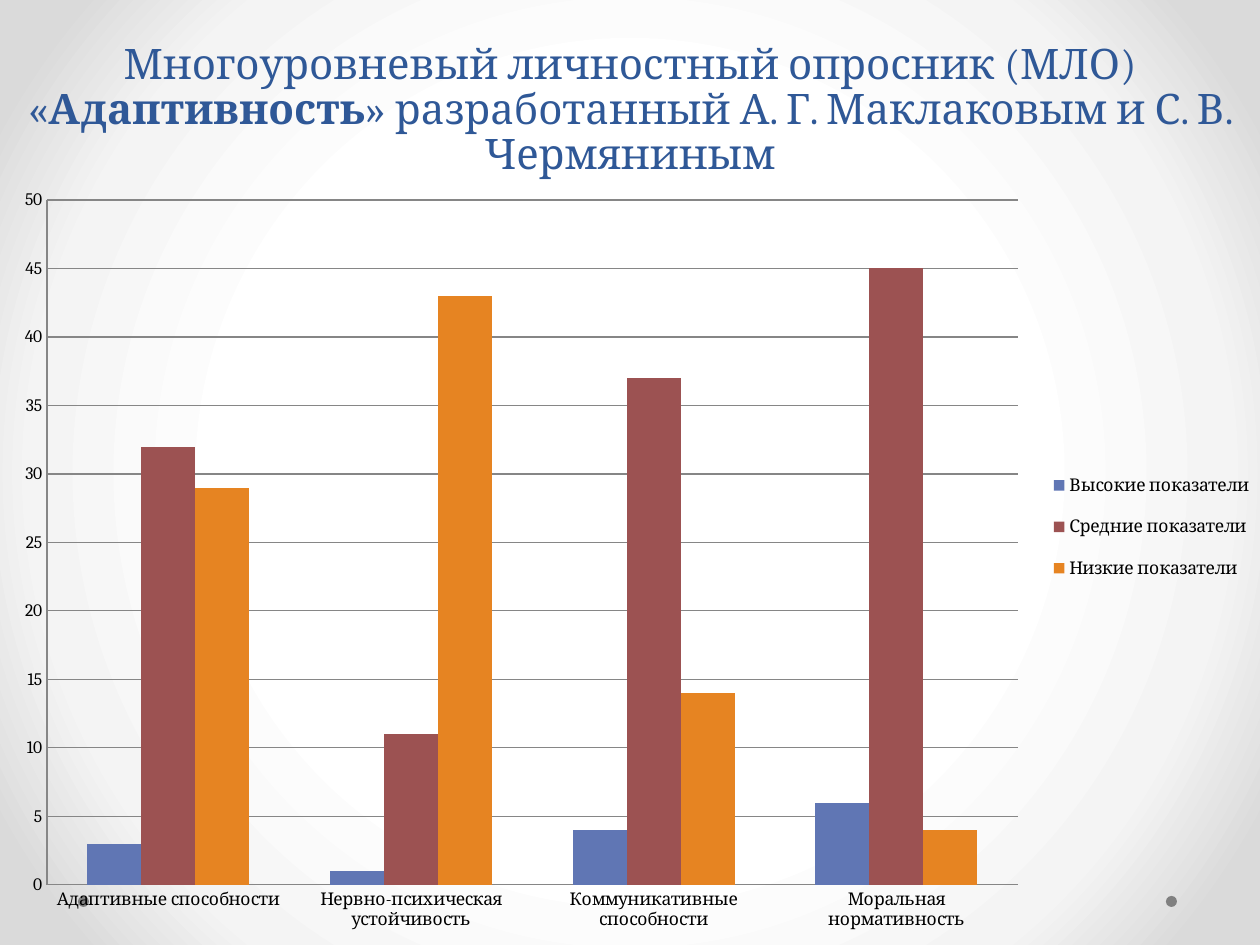
from typing import NamedTuple

from lxml.etree import SubElement
from pptx import Presentation
from pptx.chart.data import CategoryChartData as ChartData
from pptx.dml.color import RGBColor as Rgb
from pptx.enum.chart import XL_CHART_TYPE as Kind, XL_LEGEND_POSITION as Side, XL_TICK_MARK as Tick
from pptx.enum.shapes import MSO_SHAPE as Form
from pptx.enum.text import MSO_ANCHOR as Anchor, PP_ALIGN as Align
from pptx.oxml.ns import qn
from pptx.util import Emu, Pt

FONT = "Cambria"
GREY = "868686"


class Box(NamedTuple):
    x: int
    y: int
    w: int
    h: int


class Row(NamedTuple):
    name: str
    vals: tuple[int, ...]
    tint: str


class Run(NamedTuple):
    text: str
    bold: bool


PAGE = Box(0, 0, 1260, 945)
HEAD = Box(0, 0, 1260, 185)
GRAPH = Box(0, 175, 1260, 770)
PLOT = Box(47, 200, 971, 685)
KEY = Box(1044, 454, 215, 146)
DOTS = [Box(x, 896, 11, 11) for x in (78, 1166)]
STOPS = {50: "FFFFFF", 76: "F4F4F4", 92: "DADADA"}
TITLE = [
    Run("Многоуровневый личностный опросник (МЛО) «", False),
    Run("Адаптивность", True),
    Run("» разработанный А. Г. Маклаковым и С. В. Чермяниным", False),
]
CATS = ["Адаптивные способности", "Нервно-психическая устойчивость",
        "Коммуникативные способности", "Моральная нормативность"]
ROWS = [
    Row("Высокие показатели", (3, 1, 4, 6), "6076B4"),
    Row("Средние показатели", (32, 11, 37, 45), "9C5252"),
    Row("Низкие показатели", (29, 43, 14, 4), "E68422"),
]


def px(n: int) -> Emu:
    return Emu(round(n * 914400 / 126))


def place(box: Box) -> list[Emu]:
    return [px(n) for n in box]


def hue(code: str) -> Rgb:
    return Rgb.from_string(code)


def apply(item, form: dict) -> None:
    for key, val in form.items():
        setattr(item, key, val)


def paint(fill, code: str) -> None:
    fill.solid()
    fill.fore_color.rgb = hue(code)


def stroke(line) -> None:
    paint(line.fill, GREY)
    line.width = Pt(0.75)


def shade(slide) -> None:
    """Fill the background with a round gradient."""
    slide.background.fill.gradient()
    grad = slide.element.find(".//" + qn("a:gradFill"))
    for kid in list(grad):
        grad.remove(kid)
    stops = SubElement(grad, qn("a:gsLst"))
    for pos, code in STOPS.items():
        stop = SubElement(stops, qn("a:gs"), pos=str(pos * 1000))
        SubElement(stop, qn("a:srgbClr"), val=code)
    ring = SubElement(grad, qn("a:path"))
    ring.set("path", "circle")
    SubElement(ring, qn("a:fillToRect"), {side: "50000" for side in "ltrb"})


def dot(slide, box: Box) -> None:
    shape = slide.shapes.add_shape(Form.OVAL, *place(box))
    shape.shadow.inherit = False
    paint(shape.fill, "808080")
    shape.line.fill.background()


def head(slide) -> None:
    frame = slide.shapes.add_textbox(*place(HEAD)).text_frame
    apply(frame, {"word_wrap": True, "vertical_anchor": Anchor.BOTTOM})
    para = frame.paragraphs[0]
    apply(para, {"alignment": Align.CENTER, "line_spacing": 0.9})
    for part in TITLE:
        run = para.add_run()
        run.text = part.text
        apply(run.font, {"name": FONT, "size": Pt(24), "bold": part.bold})
        run.font.color.rgb = hue("2F5897")


def layout(owner, box: Box, inner: bool) -> None:
    """Fix the place of a chart part as shares of the chart area."""
    old = owner.find(qn("c:layout"))
    if old is not None:
        owner.remove(old)
    node = SubElement(owner, qn("c:layout"))
    owner.remove(node)
    owner.insert(0 if inner else 1, node)
    man = SubElement(node, qn("c:manualLayout"))
    if inner:
        SubElement(man, qn("c:layoutTarget"), val="inner")
    for tag in ("xMode", "yMode"):
        SubElement(man, qn("c:" + tag), val="edge")
    shares = {"x": (box.x - GRAPH.x) / GRAPH.w, "y": (box.y - GRAPH.y) / GRAPH.h,
              "w": box.w / GRAPH.w, "h": box.h / GRAPH.h}
    for tag, val in shares.items():
        SubElement(man, qn("c:" + tag), val=f"{val:.4f}")


def graph(slide) -> None:
    data = ChartData()
    data.categories = CATS
    for row in ROWS:
        data.add_series(row.name, row.vals)
    chart = slide.shapes.add_chart(Kind.COLUMN_CLUSTERED, *place(GRAPH), data).chart
    apply(chart, {"has_title": False, "has_legend": True})
    apply(chart.font, {"name": FONT, "size": Pt(10)})
    chart.font.color.rgb = hue("000000")
    apply(chart.legend, {"position": Side.RIGHT, "include_in_layout": False})

    # Bars
    plot = chart.plots[0]
    apply(plot, {"gap_width": 150, "overlap": 0, "vary_by_categories": False})
    for bar, row in zip(plot.series, ROWS):
        paint(bar.format.fill, row.tint)

    # Axes
    for axis in (chart.category_axis, chart.value_axis):
        apply(axis, {"major_tick_mark": Tick.NONE, "minor_tick_mark": Tick.NONE})
        stroke(axis.format.line)
    apply(chart.value_axis, {"minimum_scale": 0, "maximum_scale": 50,
                             "major_unit": 5, "has_major_gridlines": True})
    stroke(chart.value_axis.major_gridlines.format.line)

    # Places of plot and legend
    root = chart.element
    layout(root.find(".//" + qn("c:plotArea")), PLOT, True)
    layout(root.find(".//" + qn("c:legend")), KEY, False)


def main() -> None:
    deck = Presentation()
    apply(deck, {"slide_width": px(PAGE.w), "slide_height": px(PAGE.h)})
    slide = deck.slides.add_slide(deck.slide_layouts[6])
    shade(slide)
    for box in DOTS:
        dot(slide, box)
    head(slide)
    graph(slide)
    deck.save("out.pptx")


if __name__ == "__main__":
    main()
